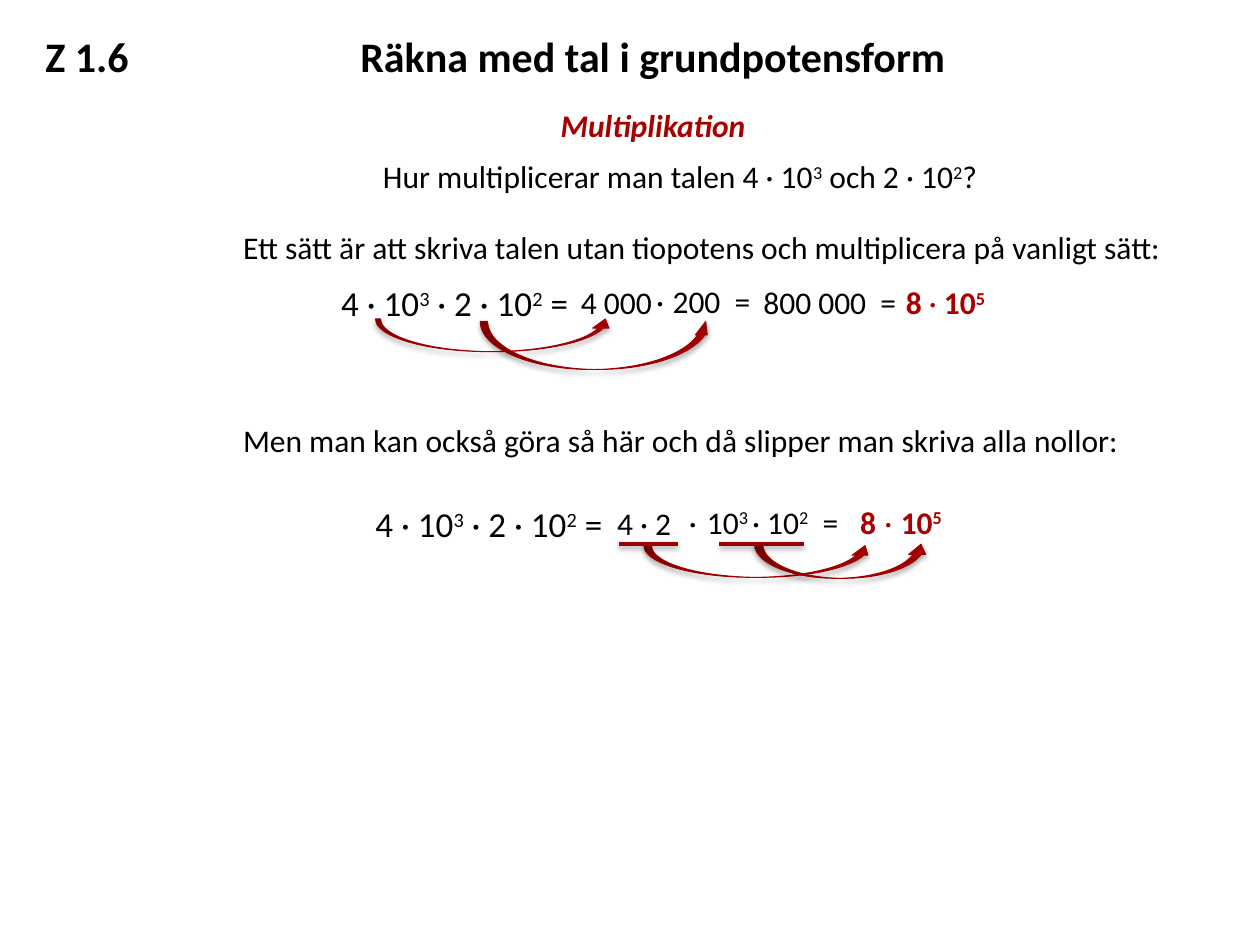
from lxml.etree import SubElement
from pptx import Presentation
from pptx.dml.color import RGBColor
from pptx.enum.shapes import MSO_CONNECTOR, MSO_SHAPE
from pptx.enum.text import MSO_ANCHOR, MSO_AUTO_SIZE, PP_ALIGN
from pptx.oxml.ns import qn
from pptx.util import Cm, Pt

THEME = {
    "font": "Calibri",
    "black": RGBColor(0x00, 0x00, 0x00),
    "red": RGBColor(0xA7, 0x00, 0x01),
    "arrow": RGBColor(0x9F, 0x00, 0x02),
    "underline": RGBColor(0x9A, 0x00, 0x02),
    "title": Pt(24),
    "equation": Pt(20),
    "body": Pt(18),
}


def write_spans(para, spans, size, color):
    for text, marks in spans:
        span = para.add_run()
        span.text = text
        formats = {"name": THEME["font"], "size": size, "bold": "b" in marks, "italic": "i" in marks}
        for name, value in formats.items():
            setattr(span.font, name, value)
        span.font.color.rgb = color
        properties = span._r.get_or_add_rPr()
        if "^" in marks:
            properties.set("baseline", "30000")
        if "w" in marks:
            properties.set("spc", "400")


def add_shadow(shape, distance, opacity):
    effects = SubElement(shape._element.spPr, qn("a:effectLst"))
    shadow = SubElement(effects, qn("a:outerShdw"), blurRad="40000", dist=str(distance),
                        dir="5400000", rotWithShape="0")
    color = SubElement(shadow, qn("a:srgbClr"), val="000000")
    SubElement(color, qn("a:alpha"), val=str(opacity))


deck = Presentation()
deck.slide_width = Cm(25.4)
deck.slide_height = Cm(19.05)
page = deck.slides.add_slide(deck.slide_layouts[5])

title = page.shapes.title
title_place = {"left": Cm(0.66), "top": Cm(0.48), "width": Cm(24.41), "height": Cm(1.27)}
for name, value in title_place.items():
    setattr(title, name, value)
title_format = {"vertical_anchor": MSO_ANCHOR.TOP, "word_wrap": True, "auto_size": MSO_AUTO_SIZE.NONE}
for name, value in title_format.items():
    setattr(title.text_frame, name, value)
title_para = title.text_frame.paragraphs[0]
title_para.alignment = PP_ALIGN.LEFT
tabs = SubElement(title_para._p.get_or_add_pPr(), qn("a:tabLst"))
SubElement(tabs, qn("a:tab"), pos=str(Cm(6.35)), algn="l")
write_spans(title_para, [("Z 1.6\tRäkna med tal i grundpotensform", "b")], THEME["title"], THEME["black"])

product = [("4 · 10", ""), ("3", "^"), (" · 2 · 10", ""), ("2", "^"), (" =", "")]
dot = [("·", "")]
equals = [(" ", "w"), ("=", "")]
texts = [
    (7.47, 3.05, 13.0, True, "body", "black",
     [("Hur multiplicerar man talen 4 · 10", ""), ("3", "^"), (" och 2 · 10", ""), ("2", "^"), ("?", "")]),
    (6.63, 5.56, 6.68, True, "equation", "black", product),
    (4.65, 4.47, 19.41, False, "body", "black",
     [("Ett sätt är att skriva talen utan tiopotens och multiplicera på vanligt sätt:", "")]),
    (11.05, 2.01, 4.5, True, "body", "red", [("Multiplikation", "bi")]),
    (13.31, 5.56, 2.11, False, "body", "black", [("200", "")] + equals),
    (12.98, 5.56, 0.69, False, "body", "black", dot),
    (18.01, 5.59, 2.46, True, "body", "red", [("8 ", "b"), ("· ", ""), ("10", "b"), ("5", "b^")]),
    (11.46, 5.59, 1.96, False, "body", "black", [("4 000", "")]),
    (15.14, 5.59, 3.56, True, "body", "black", [("800 000", "")] + equals),
    (4.65, 8.36, 18.36, False, "body", "black",
     [("Men man kan också göra så här och då slipper man skriva alla nollor:", "")]),
    (7.32, 10.01, 6.68, True, "equation", "black", product),
    (14.0, 10.01, 3.28, False, "body", "black",
     [("10", ""), ("3 ", "^"), ("· 10", ""), ("2", "^")] + equals),
    (13.64, 10.01, 0.69, False, "body", "black", dot),
    (12.19, 10.03, 1.63, False, "body", "black", [("4 · 2", "")]),
    (17.09, 10.01, 0.71, True, "body", "red", [("8", "b")]),
    (17.58, 10.01, 0.69, False, "body", "red", dot),
    (17.91, 10.01, 1.37, False, "body", "red", [("10", "b"), ("5", "b^")]),
]
for left, top, width, wrap, size, color, spans in texts:
    height = 1.12 if size == "equation" else 1.02
    box = page.shapes.add_textbox(Cm(left), Cm(top), Cm(width), Cm(height))
    box.text_frame.word_wrap = wrap
    box.text_frame.auto_size = MSO_AUTO_SIZE.SHAPE_TO_FIT_TEXT
    write_spans(box.text_frame.paragraphs[0], spans, THEME[size], THEME[color])

first_group = page.shapes.add_group_shape()
second_group = page.shapes.add_group_shape()
arrows = [
    (page, 7.57, 6.43, 4.8, 0.66, (0.157, 0.5, 0.281)),
    (page, 9.68, 6.48, 4.67, 0.97, (0.157, 0.25, 0.281)),
    (first_group, 12.98, 11.0, 4.62, 0.64, (0.24, 0.5, 0.302)),
    (second_group, 15.21, 10.97, 3.53, 0.69, (0.24, 0.5, 0.302)),
]
for parent, left, top, width, height, adjustments in arrows:
    arrow = parent.shapes.add_shape(MSO_SHAPE.CURVED_UP_ARROW, Cm(left), Cm(top), Cm(width), Cm(height))
    for index, value in enumerate(adjustments):
        arrow.adjustments[index] = value
    arrow.fill.solid()
    arrow.fill.fore_color.rgb = THEME["arrow"]
    arrow.line.color.rgb = THEME["arrow"]
    arrow.line.width = Pt(0.5)
    add_shadow(arrow, 23000, 35000)

for group, start, end in [(first_group, 12.47, 13.67), (second_group, 14.5, 16.21)]:
    underline = group.shapes.add_connector(MSO_CONNECTOR.STRAIGHT, Cm(start), Cm(10.97), Cm(end), Cm(10.97))
    underline.line.color.rgb = THEME["underline"]
    underline.line.width = Pt(2)
    add_shadow(underline, 20000, 38000)

deck.save("out.pptx")
